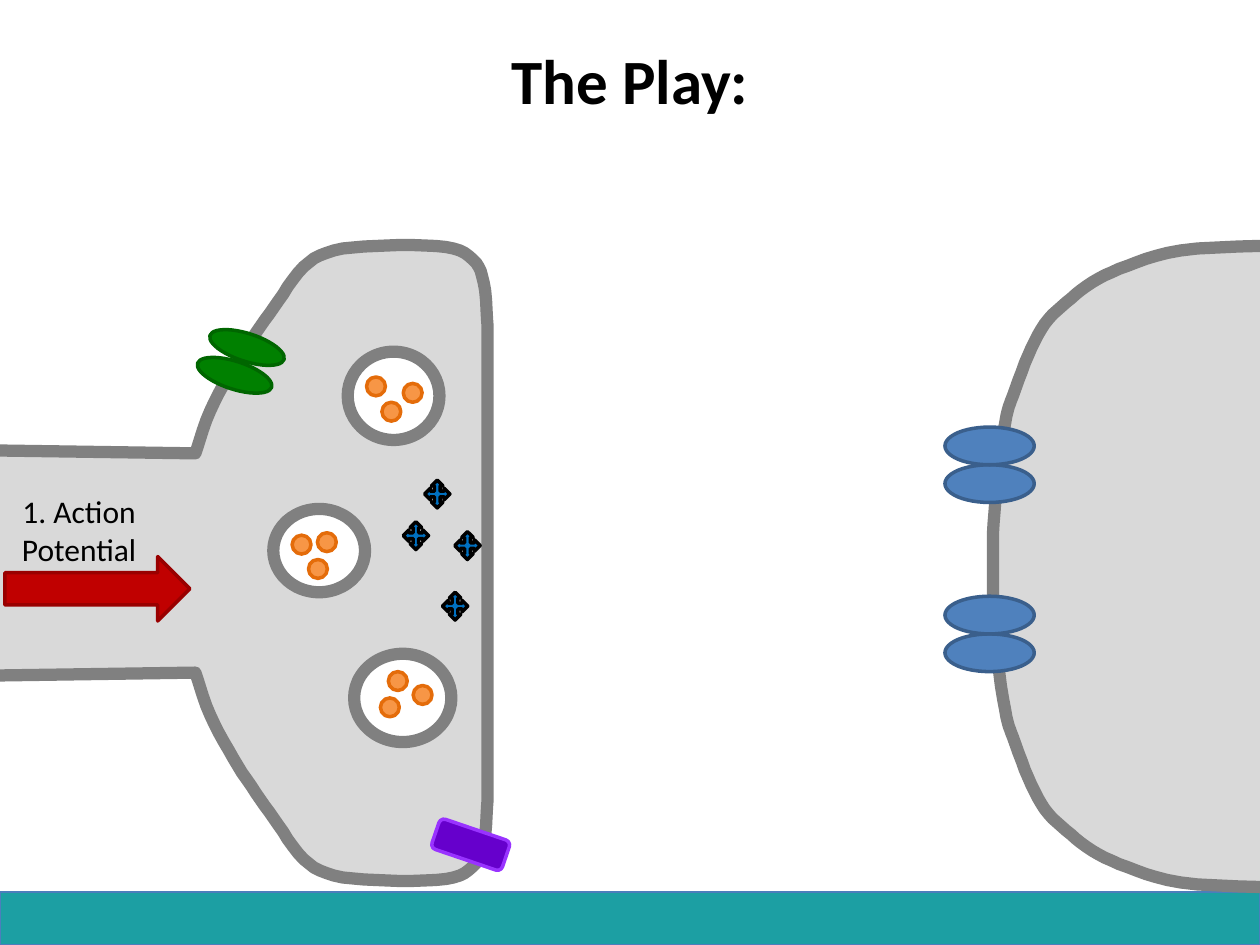
import pptx
import pptx.util
import pptx.dml.color
import pptx.enum.shapes
import pptx.enum.text

Cm = pptx.util.Cm
Pt = pptx.util.Pt
RGB = pptx.dml.color.RGBColor
SHAPE = pptx.enum.shapes.MSO_SHAPE

BLACK = RGB(0x00, 0x00, 0x00)
WHITE = RGB(0xFF, 0xFF, 0xFF)
CELL = RGB(0xD9, 0xD9, 0xD9)
MEMBRANE = RGB(0x80, 0x80, 0x80)
TEAL = RGB(0x1C, 0x9F, 0xA3)
TEAL_EDGE = RGB(0x4B, 0x7E, 0xBC)
GREEN = RGB(0x00, 0x80, 0x00)
GREEN_EDGE = RGB(0x00, 0x66, 0x00)
ORANGE = RGB(0xF7, 0x96, 0x46)
ORANGE_EDGE = RGB(0xE4, 0x6C, 0x0A)
RED = RGB(0xC0, 0x00, 0x00)
RED_EDGE = RGB(0x99, 0x00, 0x00)
BLUE = RGB(0x4F, 0x81, 0xBD)
BLUE_EDGE = RGB(0x3A, 0x5F, 0x8C)
PURPLE = RGB(0x66, 0x00, 0xCC)
PURPLE_EDGE = RGB(0x99, 0x33, 0xFF)
CALCIUM = RGB(0x00, 0x70, 0xC0)

FONT = "Calibri"
MEMBRANE_WIDTH = 7
STEPS_PER_SPAN = 5
UNITS_PER_CM = 100

AXON_START = (-0.2, 4.0)
TERMINAL_SHOULDER = [
    (3.94, 4.06), (4.24, 3.2), (4.7, 2.34), (5.16, 1.63), (5.61, 0.99), (6.12, 0.3),
    (6.73, -0.03), (7.8, -0.13), (8.99, -0.1), (9.53, 0.15), (9.75, 0.61), (9.83, 1.5),
]
TERMINAL_MIDLINE = 6.27

DENDRITE_SHOULDER = [
    (7.82, -0.13), (6.02, -0.03), (4.95, 0.28), (4.24, 0.61), (3.71, 1.02), (3.28, 1.45),
    (2.95, 2.08), (2.64, 2.9), (2.51, 3.3), (2.34, 4.4), (2.24, 5.64),
]
DENDRITE_MIDLINE = 6.34


def spline(before, start, end, after, t):
    return 0.5 * (2 * start + (end - before) * t
                  + (2 * before - 5 * start + 4 * end - after) * t ** 2
                  + (3 * start - before - 3 * end + after) * t ** 3)


def smooth(anchors):
    padded = [anchors[0], *anchors, anchors[-1]]
    curve = []
    for span in zip(padded, padded[1:], padded[2:], padded[3:]):
        xs, ys = zip(*span)
        for step in range(STEPS_PER_SPAN):
            t = step / STEPS_PER_SPAN
            curve.append((spline(*xs, t), spline(*ys, t)))
    return curve + [anchors[-1]]


def with_mirrored_half(upper_half, midline):
    return upper_half + [(x, 2 * midline - y) for x, y in reversed(upper_half)]


def paint(shape, fill, edge, width=2):
    shape.shadow.inherit = False
    shape.fill.solid()
    shape.fill.fore_color.rgb = fill
    shape.line.color.rgb = edge
    shape.line.width = Pt(width)


def add_part(shapes, kind, box, fill, edge, width=2, turn=0):
    part = shapes.add_shape(kind, *[Cm(length) for length in box])
    paint(part, fill, edge, width)
    part.rotation = turn


def add_cell_body(shapes, left, top, upper_half, midline):
    outline = [(round(x * UNITS_PER_CM), round(y * UNITS_PER_CM))
               for x, y in with_mirrored_half(upper_half, midline)]
    builder = shapes.build_freeform(*outline[0], scale=Cm(1 / UNITS_PER_CM))
    builder.add_line_segments(outline[1:], close=True)
    body = builder.convert_to_shape(Cm(left), Cm(top))
    paint(body, CELL, MEMBRANE, MEMBRANE_WIDTH)


def write(frame, wording, size, bold=False):
    frame.word_wrap = True
    paragraph = frame.paragraphs[0]
    paragraph.alignment = pptx.enum.text.PP_ALIGN.CENTER
    run = paragraph.add_run()
    run.text = wording
    run.font.name = FONT
    run.font.size = Pt(size)
    run.font.bold = bold
    run.font.color.rgb = BLACK


def add_heading(slide, left, top, width, height):
    title = slide.shapes.title
    title.left, title.top, title.width, title.height = map(Cm, (left, top, width, height))
    title.text_frame.vertical_anchor = pptx.enum.text.MSO_ANCHOR.MIDDLE
    write(title.text_frame, "The Play:", 36, bold=True)


def add_vesicle(shapes, left, top, width, height, transmitters):
    vesicle = shapes.add_group_shape().shapes
    add_part(vesicle, SHAPE.OVAL, (left, top, width, height), WHITE, MEMBRANE, MEMBRANE_WIDTH)
    for x, y in transmitters:
        add_part(vesicle, SHAPE.OVAL, (left + x, top + y, 0.38, 0.38), ORANGE, ORANGE_EDGE)


def add_action_potential(shapes, left, top):
    add_part(shapes, SHAPE.RIGHT_ARROW, (left + 0.22, top + 1.42, 3.73, 1.3), RED, RED_EDGE)
    label = shapes.add_textbox(Cm(left), Cm(top), Cm(3.43), Cm(1.8))
    label.text_frame.auto_size = pptx.enum.text.MSO_AUTO_SIZE.SHAPE_TO_FIT_TEXT
    write(label.text_frame, "1. Action Potential", 18)


def add_presynaptic_side(shapes, left, top):
    add_cell_body(shapes, left, top, [AXON_START] + smooth(TERMINAL_SHOULDER), TERMINAL_MIDLINE)

    for x, y in [(4.7, 1.14), (4.45, 1.7)]:
        add_part(shapes, SHAPE.OVAL, (left + x, top + y, 0.56, 1.57), GREEN, GREEN_EDGE, turn=288)

    vesicles = [
        (7.01, 2.01, 1.85, 1.78, [(0.38, 0.51), (1.12, 0.64), (0.69, 1.02)]),
        (5.51, 5.18, 1.85, 1.68, [(0.38, 0.53), (0.89, 0.48), (0.71, 1.02)]),
        (7.14, 8.1, 1.96, 1.78, [(0.69, 0.36), (1.19, 0.64), (0.53, 0.89)]),
    ]
    for x, y, width, height, transmitters in vesicles:
        add_vesicle(shapes, left + x, top + y, width, height, transmitters)

    add_action_potential(shapes, left - 0.12, top + 4.72)
    add_part(shapes, SHAPE.ROUNDED_RECTANGLE, (left + 8.74, top + 11.63, 1.5, 0.64),
             PURPLE, PURPLE_EDGE, turn=18.8)

    for x, y in [(8.13, 5.44), (8.56, 4.6), (9.17, 5.64), (8.92, 6.86)]:
        add_part(shapes, SHAPE.QUAD_ARROW, (left + x, top + y, 0.51, 0.56), CALCIUM, BLACK)


def add_postsynaptic_side(shapes, left, top):
    add_cell_body(shapes, left, top, smooth(DENDRITE_SHOULDER), DENDRITE_MIDLINE)
    receptor_width, receptor_height = 1.8, 0.76
    for pair_top in (6.94, 3.53):
        for lobe in (1, 0):
            lobe_top = top + pair_top + lobe * receptor_height
            add_part(shapes, SHAPE.OVAL, (left + 1.27, lobe_top, receptor_width, receptor_height),
                     BLUE, BLUE_EDGE)


def add_footer_band(shapes, left, top, width, height):
    add_part(shapes, SHAPE.RECTANGLE, (left, top, width, height), TEAL, TEAL_EDGE, 0.75)


def main():
    deck = pptx.Presentation()
    deck.slide_width, deck.slide_height = Cm(25.4), Cm(19.05)
    slide = deck.slides.add_slide(deck.slide_layouts[5])
    add_footer_band(slide.shapes, 0, 17.98, 25.4, 1.07)
    add_heading(slide, 0, 0, 25.4, 3.18)
    add_presynaptic_side(slide.shapes, 0, 5.08)
    add_postsynaptic_side(slide.shapes, 17.78, 5.08)
    deck.save("out.pptx")


if __name__ == "__main__":
    main()
